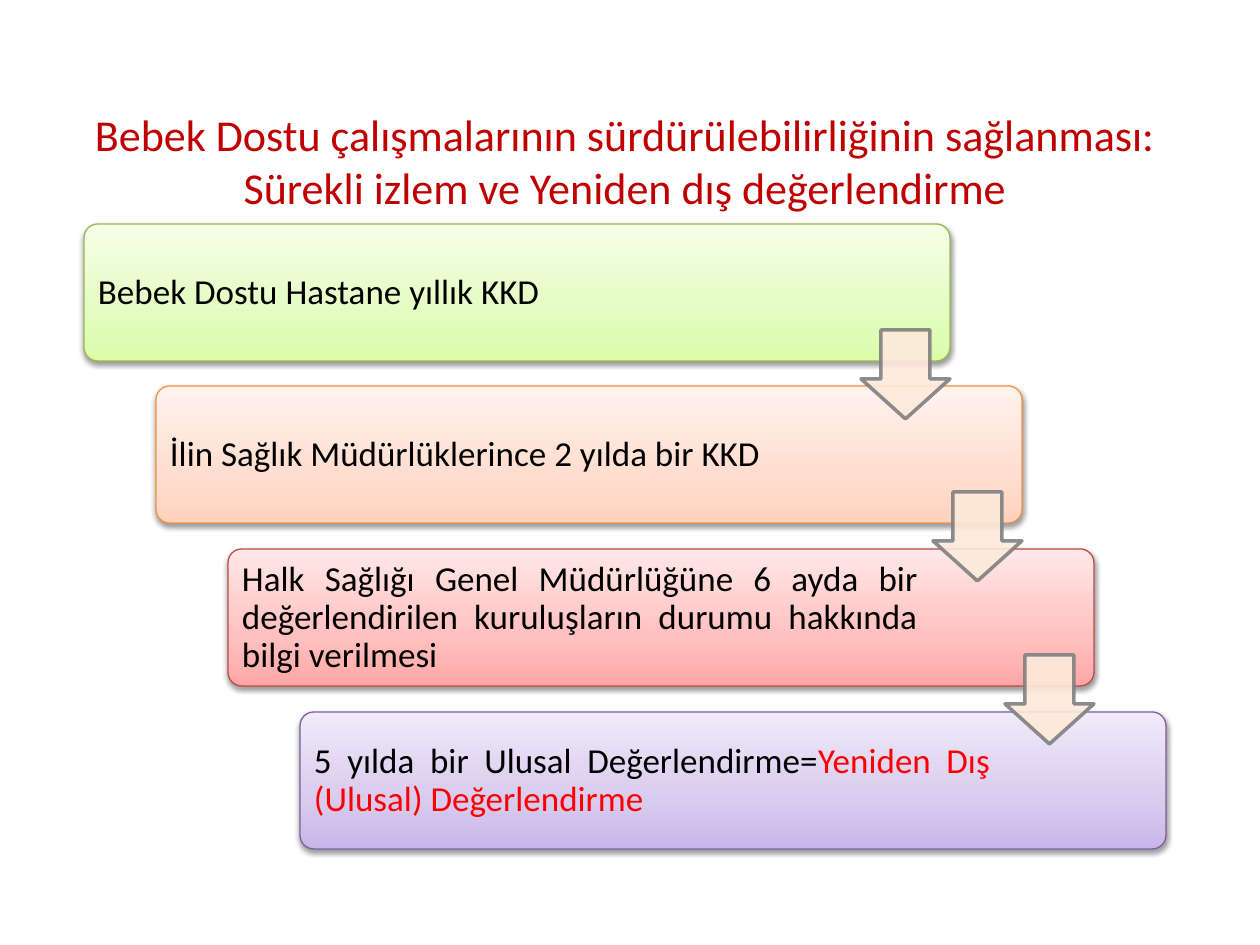
"""Build the slide of four cascading steps for sustaining Baby-Friendly work."""
from copy import deepcopy
from dataclasses import dataclass

from pptx import Presentation
from pptx.dml.color import RGBColor
from pptx.enum.shapes import MSO_SHAPE as Preset
from pptx.enum.text import MSO_ANCHOR as Anchor, MSO_AUTO_SIZE as AutoSize, PP_ALIGN as Align
from pptx.oxml import parse_xml
from pptx.oxml.ns import nsdecls, qn
from pptx.shapes.autoshape import Shape
from pptx.slide import Slide
from pptx.util import Pt

PX = 914400 / 126
FONT = "Calibri"
COLORS = {
    "title": "C00000",
    "text": "000000",
    "accent": "FF0000",
    "arrow": "FDEADA",
    "arrow_line": "808080",
}
STOPS = (0, 0.35, 1)
CARD_LEFT, CARD_TOP, CARD_WIDTH, CARD_HEIGHT = 84, 224, 866, 137
STEP_X, THREE_STEPS_Y = 72, 488
ARROW_X, ARROW_Y, ARROW_SIZE = 777, 106, 89
SHADOW = (
    f'<a:outerShdw {nsdecls("a")} blurRad="40000" dist="20000" dir="5400000" rotWithShape="0">'
    '<a:srgbClr val="000000"><a:alpha val="38000"/></a:srgbClr></a:outerShdw>'
)


@dataclass(frozen=True)
class Step:
    spans: tuple[tuple[str, str], ...]
    gradient: tuple[str, str, str]
    line: str
    text_width: int = 696


STEPS = (
    Step((("Bebek Dostu Hastane yıllık KKD", "text"),),
         ("DAFDA7", "E4FCC2", "F5FFE7"), "98B955", 706),
    Step((("İlin Sağlık Müdürlüklerince 2 yılda bir KKD", "text"),),
         ("FFD2BD", "FFDED0", "FFF2ED"), "F69240"),
    Step((("Halk Sağlığı Genel Müdürlüğüne 6 ayda bir değerlendirilen "
           "kuruluşların durumu hakkında bilgi verilmesi", "text"),),
         ("FFA6A5", "FFC0BF", "FFE7E7"), "BF4C48"),
    Step((("5 yılda bir Ulusal Değerlendirme=", "text"),
          ("Yeniden Dış (Ulusal) Değerlendirme", "accent")),
         ("C9B5E8", "D8CBEE", "F0EAF9"), "7D60A0"),
)


def px(*lengths: int) -> list[int]:
    return [round(length * PX) for length in lengths]


def apply(target: object, values: dict) -> None:
    for name, value in values.items():
        setattr(target, name, value)


def corner(index: int) -> tuple[int, int]:
    return CARD_LEFT + STEP_X * index, CARD_TOP + THREE_STEPS_Y * index // 3


def add_span(para, text: str, size: float, color: str) -> None:
    span = para.add_run()
    span.text = text
    apply(span.font, {"name": FONT, "size": Pt(size)})
    span.font.color.rgb = RGBColor.from_string(COLORS[color])


def add_title(slide: Slide) -> None:
    title = slide.shapes.title
    apply(title, dict(zip(("left", "top", "width", "height"), px(58, 96, 1134, 129))))
    apply(title.text_frame, {"word_wrap": True, "auto_size": AutoSize.NONE,
                             "vertical_anchor": Anchor.MIDDLE})
    para = title.text_frame.paragraphs[0]
    para.alignment = Align.CENTER
    add_span(para, "Bebek Dostu çalışmalarının sürdürülebilirliğinin sağlanması: "
                   "Sürekli izlem ve Yeniden dış değerlendirme", 25.2, "title")


def add_outlined(slide: Slide, preset: Preset, frame: list[int], line: str, width: float) -> Shape:
    shape = slide.shapes.add_shape(preset, *frame)
    shape.shadow.inherit = False
    shape.line.color.rgb = RGBColor.from_string(line)
    shape.line.width = Pt(width)
    return shape


def add_card(slide: Slide, step: Step, left: int, top: int) -> None:
    card = add_outlined(slide, Preset.ROUNDED_RECTANGLE,
                        px(left, top, CARD_WIDTH, CARD_HEIGHT), step.line, 0.75)
    card.adjustments[0] = 0.1
    card.fill.gradient()
    card.fill.gradient_angle = 90
    stop_list = card._element.spPr.find(".//" + qn("a:gsLst"))
    stop_list.append(deepcopy(stop_list[0]))
    for stop, position, color in zip(card.fill.gradient_stops, STOPS, step.gradient):
        stop.position = position
        stop.color.rgb = RGBColor.from_string(color)
    card._element.spPr.find(qn("a:effectLst")).append(parse_xml(SHADOW))


def add_label(slide: Slide, step: Step, left: int, top: int) -> None:
    box = slide.shapes.add_textbox(*px(left + 4, top + 4, step.text_width, 130))
    inset = px(10)[0]
    apply(box.text_frame, {"word_wrap": True, "vertical_anchor": Anchor.MIDDLE,
                           "margin_left": inset, "margin_right": inset,
                           "margin_top": inset, "margin_bottom": inset})
    para = box.text_frame.paragraphs[0]
    apply(para, {"alignment": Align.JUSTIFY, "line_spacing": 0.9, "space_after": Pt(7)})
    for text, color in step.spans:
        add_span(para, text, 20, color)


def add_arrow(slide: Slide, left: int, top: int) -> None:
    arrow = add_outlined(slide, Preset.DOWN_ARROW,
                         px(left + ARROW_X, top + ARROW_Y, ARROW_SIZE, ARROW_SIZE),
                         COLORS["arrow_line"], 2)
    arrow.adjustments[0], arrow.adjustments[1] = 0.55, 0.45
    arrow.fill.solid()
    arrow.fill.fore_color.rgb = RGBColor.from_string(COLORS["arrow"])
    for color in arrow._element.spPr.iter(qn("a:srgbClr")):
        color.append(parse_xml(f'<a:alpha {nsdecls("a")} val="90000"/>'))


def main() -> None:
    deck = Presentation()
    deck.slide_width, deck.slide_height = px(1260, 945)
    slide = deck.slides.add_slide(deck.slide_layouts[5])
    add_title(slide)
    for index, step in enumerate(STEPS):
        add_card(slide, step, *corner(index))
        add_label(slide, step, *corner(index))
    for index in range(len(STEPS) - 1):
        add_arrow(slide, *corner(index))
    deck.save("out.pptx")


if __name__ == "__main__":
    main()
